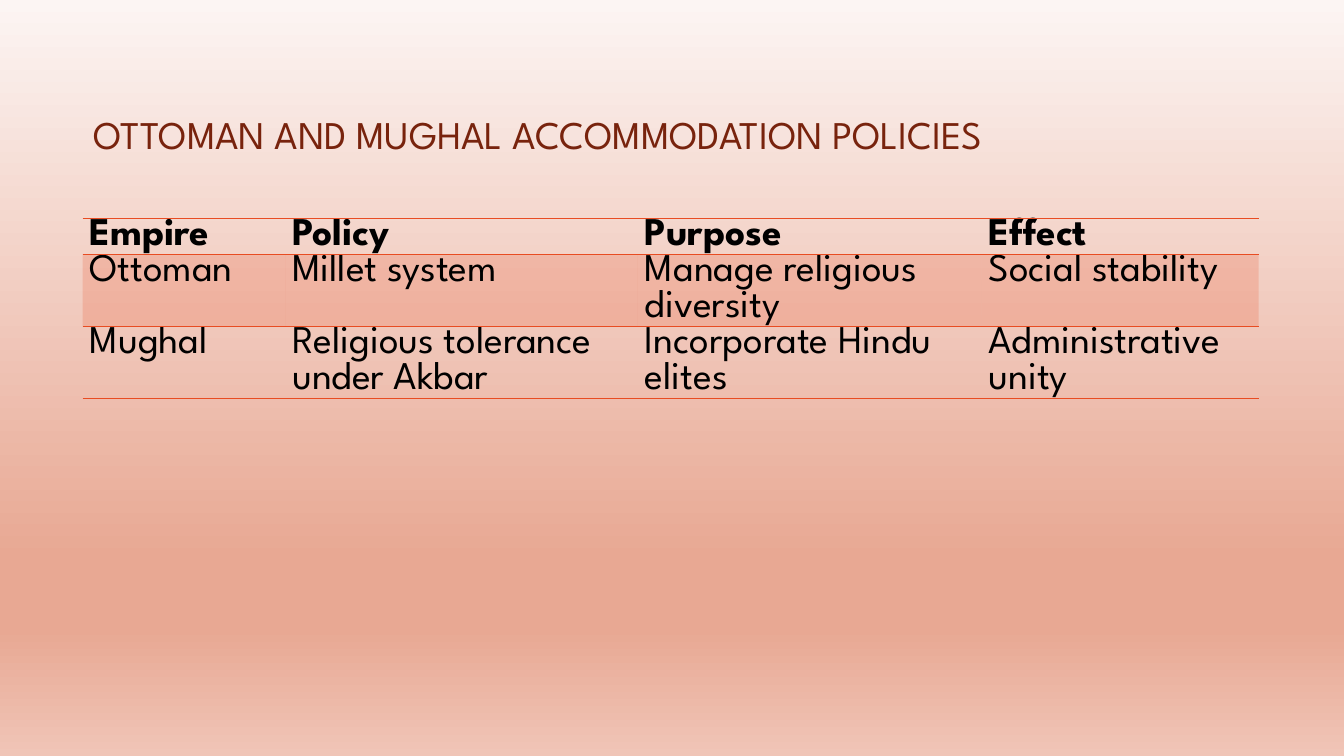
from lxml import etree
from pptx import Presentation
from pptx.dml.color import RGBColor
from pptx.enum.text import MSO_ANCHOR, PP_ALIGN
from pptx.oxml import parse_xml
from pptx.oxml.ns import nsdecls, qn
from pptx.util import Cm, Pt

COLORS = {
    "title": "78230D",
    "text": "000000",
    "accent": "E84C22",
    "pale": "FCF5F3",
    "deep": "E8A893",
    "soft": "F0C5B7",
}
FONT = "League Spartan"
NO_TABLE_STYLE = "{2D5ABB26-0587-4C30-8999-92F81FD0307C}"
BACKDROP = [(0, "pale"), (74, "deep"), (83, "deep"), (100, "soft")]
POLICIES = [
    ["Empire", "Policy", "Purpose", "Effect"],
    ["Ottoman", "Millet system", "Manage religious diversity", "Social stability"],
    ["Mughal", "Religious tolerance under Akbar", "Incorporate Hindu elites",
     "Administrative unity"],
]
COLUMN_SHARES = [2.01, 3.5, 3.41, 2.75]
ROW_HEIGHTS = [0.9, 1.81, 1.81]
RULED_EDGES = {0, 1, len(POLICIES)}
BANDED_ROW = 1


def style_text(paragraph, color, bold=False):
    """Set the shared typeface and size on a paragraph."""
    font = paragraph.font
    font.name, font.size, font.bold = FONT, Pt(28), bold
    font.color.rgb = RGBColor.from_string(COLORS[color])


def paint_backdrop(slide):
    """Fill the slide background with the vertical gradient."""
    fill = slide.background.fill
    fill.gradient()
    fill.gradient_angle = 270
    stops = slide.background._cSld.find(".//" + qn("a:gsLst"))
    for stop in list(stops):
        stops.remove(stop)
    for percent, color in BACKDROP:
        stop = etree.SubElement(stops, qn("a:gs"), pos=str(percent * 1000))
        etree.SubElement(stop, qn("a:srgbClr"), val=COLORS[color])


def place_title(slide, left, top, width, height):
    """Move the title placeholder into its box and format it."""
    title = slide.shapes.title
    title.left, title.top, title.width, title.height = left, top, width, height
    frame = title.text_frame
    frame.text = "OTTOMAN AND MUGHAL ACCOMMODATION POLICIES"
    frame.vertical_anchor = MSO_ANCHOR.BOTTOM
    frame.word_wrap = True
    heading = frame.paragraphs[0]
    heading.alignment = PP_ALIGN.LEFT
    heading.line_spacing = 0.9
    style_text(heading, "title")


def rule_cell(cell, row):
    """Draw the horizontal rules that touch a cell."""
    properties = cell._tc.get_or_add_tcPr()
    sides = [("lnT", row), ("lnB", row + 1)]
    ruled = [side for side, edge in sides if edge in RULED_EDGES]
    for position, side in enumerate(ruled):
        properties.insert(position, parse_xml(
            f'<a:{side} {nsdecls("a")} w="{Pt(1)}"><a:solidFill>'
            f'<a:srgbClr val="{COLORS["accent"]}"/></a:solidFill></a:{side}>'))


def fill_cell(cell, row):
    """Tint the banded row and leave other cells clear."""
    if row != BANDED_ROW:
        cell.fill.background()
        return
    cell.fill.solid()
    cell.fill.fore_color.rgb = RGBColor.from_string(COLORS["accent"])
    tint = cell._tc.tcPr.find(".//" + qn("a:srgbClr"))
    etree.SubElement(tint, qn("a:alpha"), val="20000")


def place_policies(slide, left, top, width, height):
    """Lay out the policy table in its box."""
    policies = slide.shapes.add_table(
        len(POLICIES), len(COLUMN_SHARES), left, top, width, height).table
    policies._tbl.tblPr.find(qn("a:tableStyleId")).text = NO_TABLE_STYLE
    policies.horz_banding = False
    for column, share in zip(policies.columns, COLUMN_SHARES):
        column.width = int(width * share / sum(COLUMN_SHARES))
    for row, (entries, row_height) in enumerate(zip(POLICIES, ROW_HEIGHTS)):
        policies.rows[row].height = Cm(row_height)
        for column, entry in enumerate(entries):
            cell = policies.cell(row, column)
            cell.text = entry
            cell.margin_left = cell.margin_right = Cm(0.18)
            cell.margin_top = cell.margin_bottom = 0
            style_text(cell.text_frame.paragraphs[0], "text", bold=row == 0)
            fill_cell(cell, row)
            rule_cell(cell, row)


def main():
    """Build and save the slide."""
    deck = Presentation()
    deck.slide_width, deck.slide_height = Cm(33.87), Cm(19.05)
    slide = deck.slides.add_slide(deck.slide_layouts[5])
    paint_backdrop(slide)
    place_title(slide, Cm(2.11), Cm(1.9), Cm(29.64), Cm(2.22))
    place_policies(slide, Cm(2.08), Cm(5.5), Cm(29.64), Cm(sum(ROW_HEIGHTS)))
    deck.save("out.pptx")


if __name__ == "__main__":
    main()
